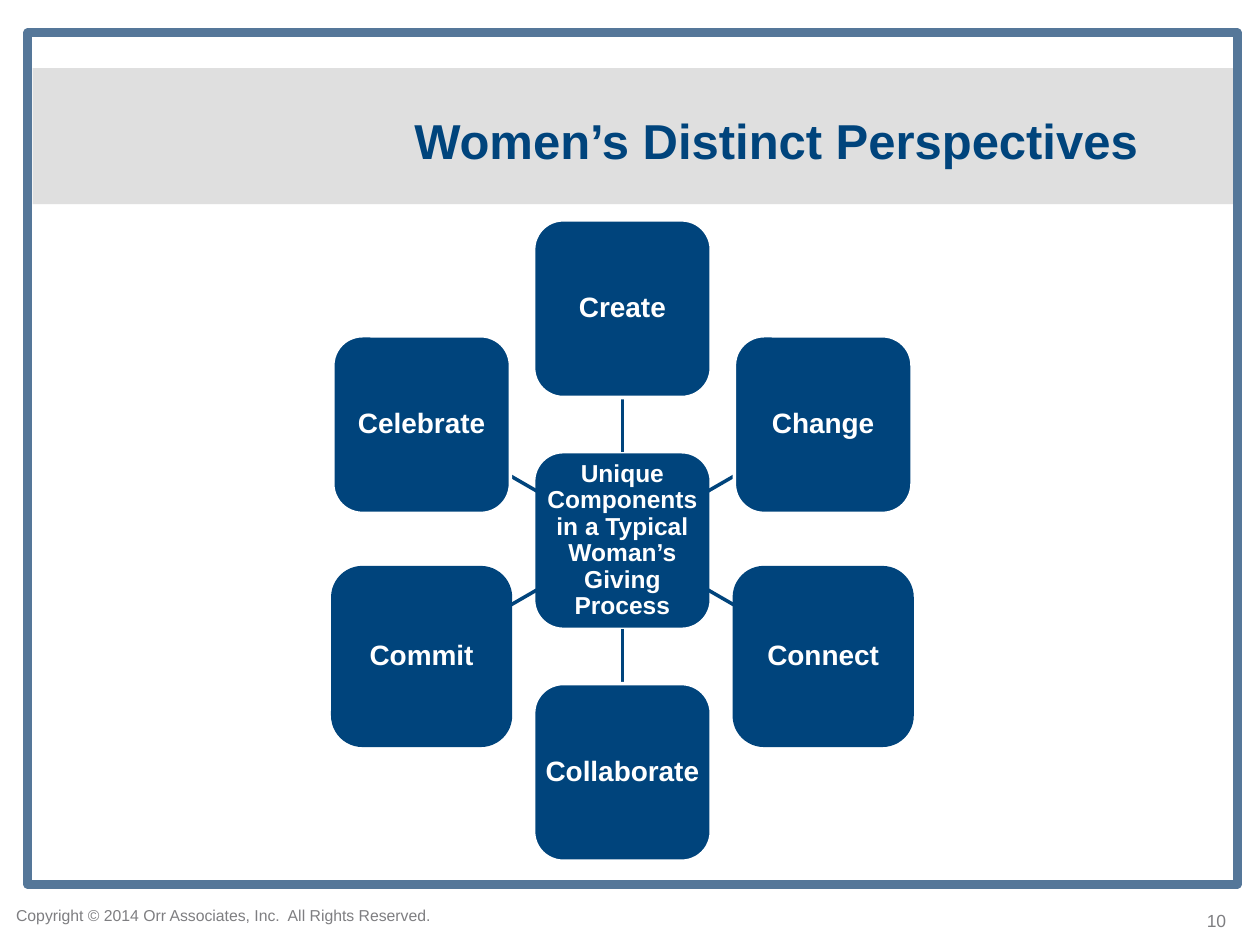
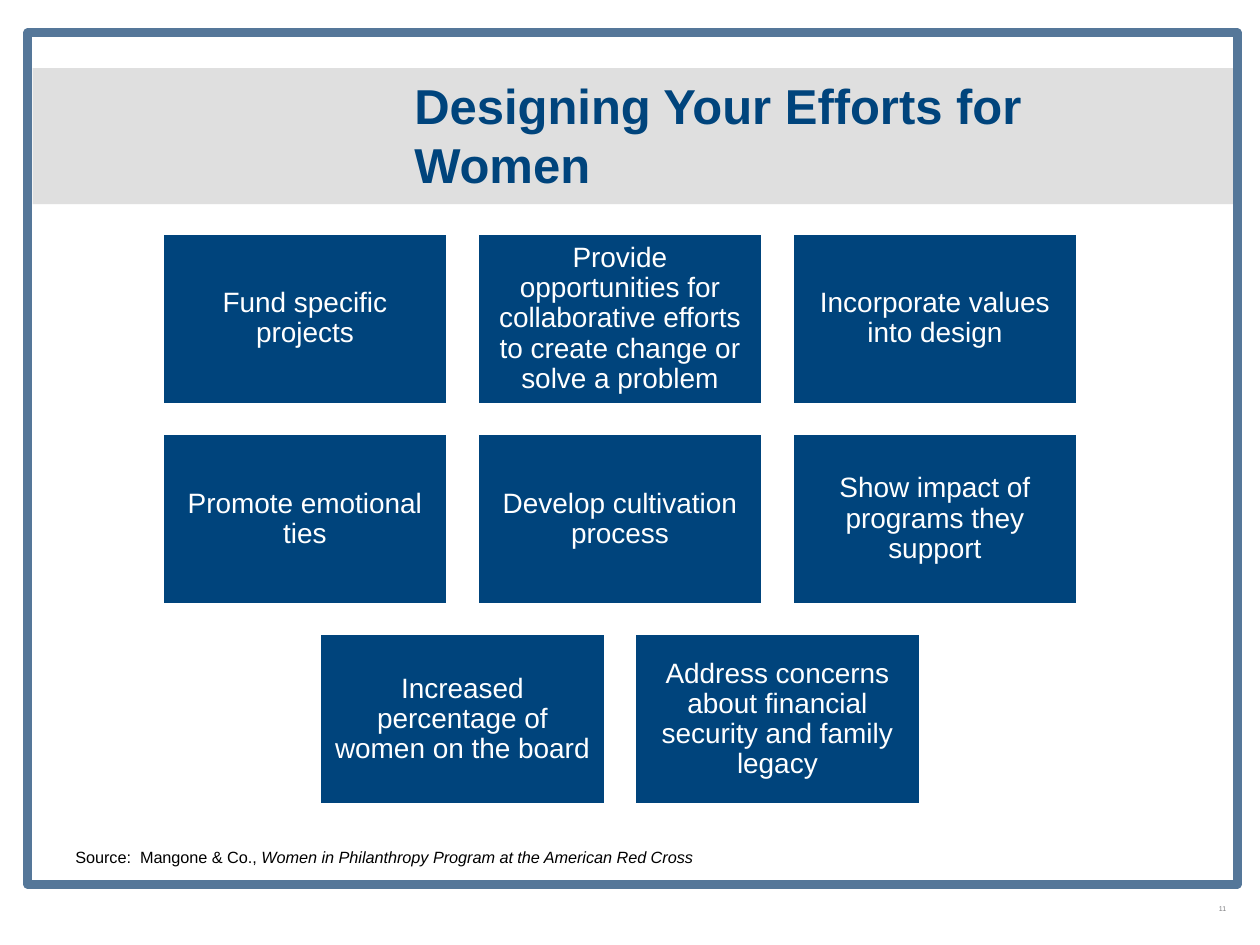
from math import cos, radians, sin

from lxml import etree
from pptx import Presentation
from pptx.dml.color import RGBColor
from pptx.enum.shapes import MSO_CONNECTOR, MSO_SHAPE
from pptx.enum.text import MSO_ANCHOR, PP_ALIGN
from pptx.oxml.ns import qn
from pptx.util import Inches, Pt

NAVY = RGBColor(0x00, 0x44, 0x7C)
STEEL = RGBColor(0x55, 0x77, 0x99)
SILVER = RGBColor(0xDF, 0xDF, 0xDF)
GRAY = RGBColor(0x7E, 0x7E, 0x81)
WHITE = RGBColor(0xFF, 0xFF, 0xFF)
BLACK = RGBColor(0x00, 0x00, 0x00)

RECT = MSO_SHAPE.RECTANGLE
ROUND = MSO_SHAPE.ROUNDED_RECTANGLE
STRAIGHT = MSO_CONNECTOR.STRAIGHT
TOP, MIDDLE, BOTTOM = MSO_ANCHOR.TOP, MSO_ANCHOR.MIDDLE, MSO_ANCHOR.BOTTOM
LEFT, CENTER, RIGHT = PP_ALIGN.LEFT, PP_ALIGN.CENTER, PP_ALIGN.RIGHT
SIDE_TOP, SIDE_BOTTOM = 0, 2

HUB = "Unique Components in a Typical Woman’s Giving Process"
HUB_X, HUB_Y = 4.94, 4.29
NODE = 1.41
ORBIT = 1.84
SPOKE_IN, SPOKE_OUT = 0.71, 1.13
NODES = [
    ("Create", WHITE),
    ("Change", WHITE),
    ("Connect", NAVY),
    ("Collaborate", WHITE),
    ("Commit", NAVY),
    ("Celebrate", WHITE),
]

GRID_MID, GRID_TOP = 4.92, 1.85
CARD_W, CARD_H, GAP_X, GAP_Y = 2.27, 1.36, 0.23, 0.23
CARDS = [
    [
        "Fund specific projects",
        "Provide opportunities for collaborative efforts "
        "to create change or solve a problem",
        "Incorporate values into design",
    ],
    [
        "Promote emotional ties",
        "Develop cultivation process",
        "Show impact of programs they support",
    ],
    [
        "Increased percentage of women on the board",
        "Address concerns about financial security and family legacy",
    ],
]


class Deck:
    """Holds the shared style and the slide being filled."""

    font = "Arial"

    def __init__(self):
        self.prs = Presentation()
        self.prs.slide_width = Inches(10)
        self.prs.slide_height = Inches(7.5)
        self.slide = None

    def start(self, title, top):
        """Add a slide with its band, frame and title."""
        self.slide = self.prs.slides.add_slide(self.prs.slide_layouts[6])
        self.box((0.26, 0.54, 9.55, 1.08), fill=SILVER)
        self.box((0.22, 0.26, 9.6, 6.76), line=STEEL, width=5)
        self.label((3.19, top, 6.12, 0.61), [title], anchor=BOTTOM,
                   size=28, color=NAVY, bold=True)

    def box(self, at, fill=None, line=None, width=2, kind=RECT):
        shape = self.slide.shapes.add_shape(kind, *map(Inches, at))
        shape.shadow.inherit = False
        for part, color in ((shape.fill, fill), (shape.line.fill, line)):
            if color is None:
                part.background()
            else:
                part.solid()
                part.fore_color.rgb = color
        if line is not None:
            shape.line.width = Pt(width)
        return shape

    def card(self, at, text, inset, line=WHITE, kind=RECT, **look):
        """Draw a navy shape with centred white text."""
        shape = self.box(at, NAVY, line, kind=kind)
        self.set_text(shape.text_frame, [text], inset=(inset, inset),
                      anchor=MIDDLE, align=CENTER, space=0.9, color=WHITE,
                      **look)
        return shape

    def label(self, at, parts, **look):
        area = self.slide.shapes.add_textbox(*map(Inches, at))
        return self.set_text(area.text_frame, parts, **look)

    def set_text(self, frame, parts, inset=(0.1, 0.05), anchor=TOP, align=LEFT,
                 space=None, wrap=True, size=16, color=BLACK, bold=False):
        """Fill a frame with one paragraph, one run for each part."""
        side, edge = map(Inches, inset)
        layout = {
            "margin_left": side, "margin_right": side,
            "margin_top": edge, "margin_bottom": edge,
            "vertical_anchor": anchor, "word_wrap": wrap,
        }
        para = frame.paragraphs[0]
        runs = [para.add_run() for _ in parts]
        for run, text in zip(runs, parts):
            run.text = text
            run.font.color.rgb = color
            put(run.font, {"name": self.font, "size": Pt(size), "bold": bold})
        put(frame, layout)
        put(para, {"alignment": align, "line_spacing": space})
        return runs

    def spoke(self, start, end):
        ends = map(Inches, (*start, *end))
        line = self.slide.shapes.add_connector(STRAIGHT, *ends)
        line.line.color.rgb = NAVY
        line.line.width = Pt(2)
        etree.SubElement(line._element.spPr, qn("a:effectLst"))
        return line

    def number(self, text, **look):
        self.label((5.6, 7.14, 4.23, 0.3), [text], align=RIGHT,
                   color=GRAY, **look)


def put(target, values):
    for name, value in values.items():
        setattr(target, name, value)


def polar(angle, radius):
    """Point around the hub, clockwise from straight up."""
    turn = radians(angle)
    return HUB_X + radius * sin(turn), HUB_Y - radius * cos(turn)


def square(x, y):
    return x - NODE / 2, y - NODE / 2, NODE, NODE


def wheel(deck):
    deck.start("Women’s Distinct Perspectives", 0.78)
    hub = deck.card(square(HUB_X, HUB_Y), HUB, 0.01, kind=ROUND,
                    size=14, bold=True)
    joins = {0: (SIDE_TOP, SIDE_BOTTOM), 180: (SIDE_BOTTOM, SIDE_TOP)}
    for i, (text, edge) in enumerate(NODES):
        angle = i * 360 // len(NODES)
        line = deck.spoke(polar(angle, SPOKE_IN), polar(angle, SPOKE_OUT))
        node = deck.card(square(*polar(angle, ORBIT)), text, 0, edge, ROUND,
                         bold=True)
        if angle in joins:
            near, far = joins[angle]
            line.begin_connect(hub, near)
            line.end_connect(node, far)
    deck.number("10", size=10, anchor=BOTTOM)
    deck.label((0.03, 6.89, 3.57, 0.5),
               ["Copyright © 2014 Orr Associates, Inc.  All Rights Reserved."],
               anchor=BOTTOM, size=9, color=GRAY)


def grid(deck):
    deck.start("Designing Your Efforts for Women", 0.97)
    for r, row in enumerate(CARDS):
        span = len(row) * (CARD_W + GAP_X) - GAP_X
        top = GRID_TOP + r * (CARD_H + GAP_Y)
        for c, text in enumerate(row):
            left = GRID_MID - span / 2 + c * (CARD_W + GAP_X)
            deck.card((left, top, CARD_W, CARD_H), text, 0.1)
    deck.number("11", size=4, space=0.8)
    runs = deck.label((0.5, 6.65, 5.9, 0.37), [
        "Source:  Mangone & Co., ",
        "Women in Philanthropy Program at the American Red Cross",
    ], wrap=False)
    runs[1].font.italic = True
    for run in runs:
        run._r.get_or_add_rPr().set("baseline", "30000")


def main():
    deck = Deck()
    wheel(deck)
    grid(deck)
    deck.prs.save("out.pptx")


if __name__ == "__main__":
    main()
